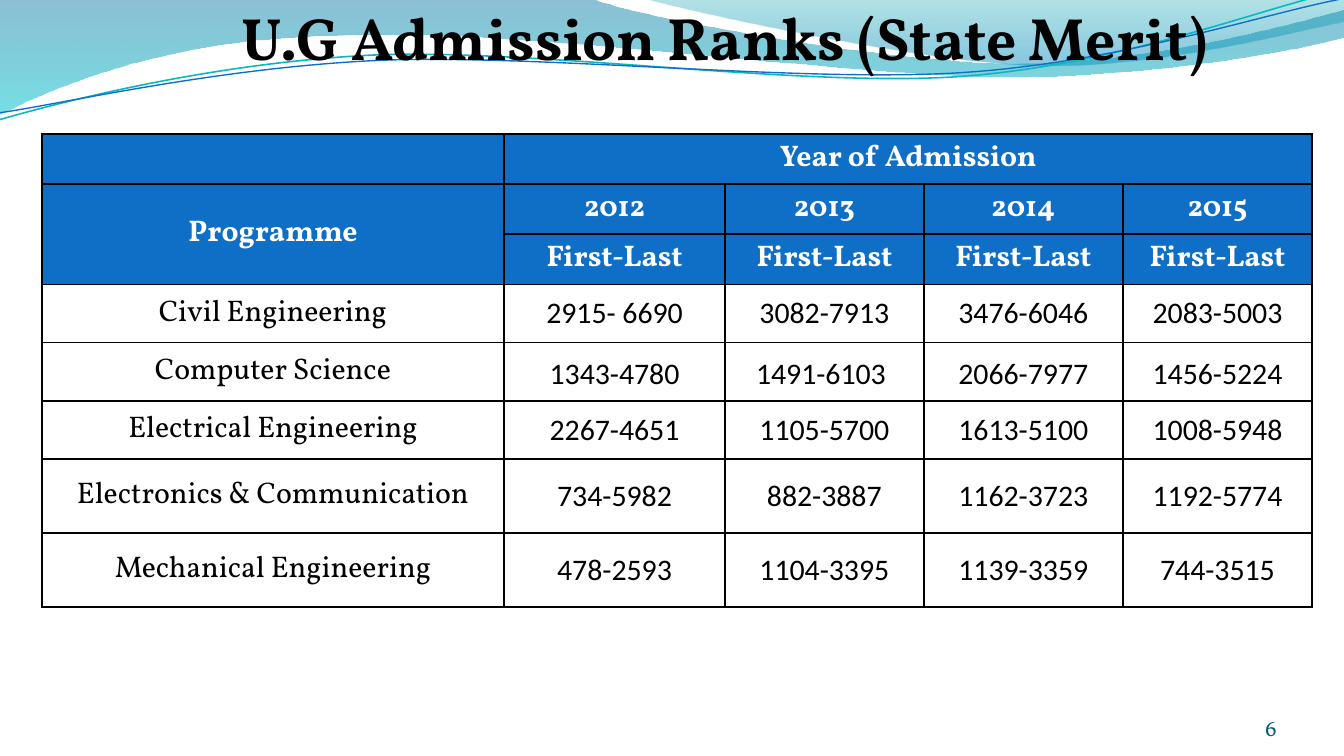
from math import cos, radians, sin

from pptx import Presentation
from pptx.dml.color import RGBColor
from pptx.enum.text import MSO_ANCHOR, MSO_AUTO_SIZE, PP_ALIGN
from pptx.oxml import parse_xml
from pptx.oxml.ns import nsdecls, qn
from pptx.util import Cm, Pt
from lxml.etree import SubElement

SERIF, SANS = "Vollkorn", "Calibri"
BLUE, WHITE, BLACK, TEAL = "0F6FC6", "FFFFFF", "000000", "045D75"
STRAND_TILT = -2.7  # degrees

# Each segment holds one point (line) or three points (Bezier curve), in cm
BANDS = [
    ([[(0, 0)], [(11.18, -0.03)],
      [(12.09, 0.33), (16.87, 1.19), (19.25, 1.19)],
      [(21.67, 1.19), (24.33, 0.48), (25.4, 0.18)],
      [(25.43, 0.69)],
      [(24.97, 0.84), (22.1, 1.45), (18.95, 1.45)],
      [(15.8, 1.42), (9.7, 0.53), (6.53, 0.66)],
      [(3.28, 0.69), (1.17, 1.57), (-0.03, 2.16)],
      [(0, 0)]],
     [(0, "0074A1", 45), (1, "00C6CF", 55)]),
    ([[(12.17, -0.03)],
      [(12.93, 0.2), (17.32, 1.17), (19.53, 1.24)],
      [(21.74, 1.32), (24.41, 0.61), (25.4, 0.41)],
      [(25.4, 0)], [(12.17, -0.03)]],
     [(0, "00A1A9", 30), (0.8, "008BBF", 45)]),
]
# Curve, centre, colour and width of each strand
STRANDS = [
    ([[(0, 2.26)],
      [(1.22, 1.91), (4.01, 1.19), (7.04, 1.04)],
      [(10.06, 0.91), (15.04, 1.65), (18.08, 1.45)],
      [(21.16, 1.24), (23.85, 0.15), (25.35, -0.18)]], (12.67, 1.1), "0AB8BF", 0.85),
    ([[(0, 2.13)],
      [(1.19, 1.96), (4.17, 1.27), (7.19, 1.14)],
      [(10.24, 1.02), (15.16, 1.57), (18.21, 1.37)],
      [(21.23, 1.17), (23.9, 0.25), (25.4, -0.03)]], (12.69, 1.13), BLUE, 0.75),
]

COLUMN_WIDTHS = [8.74, 4.17, 3.76, 3.76, 3.58]
ROW_HEIGHTS = [0.86] * 3 + [1.1] * 3 + [1.4] * 2
HEADER_ROWS = 3
RANKS = [
    ["", "Year of Admission", "", "", ""],
    ["Programme", "2012", "2013", "2014", "2015"],
    [""] + ["First-Last"] * 4,
    ["Civil Engineering", "2915- 6690", "3082-7913", "3476-6046", "2083-5003"],
    ["Computer Science", "1343-4780", "1491-6103 ", "2066-7977", "1456-5224"],
    ["Electrical Engineering", "2267-4651", "1105-5700", "1613-5100", "1008-5948"],
    ["Electronics & Communication", "734-5982", "882-3887", "1162-3723", "1192-5774"],
    ["Mechanical Engineering", "478-2593", "1104-3395", "1139-3359", "744-3515"],
]
SPACED_ROW = 4  # this row has tighter margins and wider line spacing


def color(hex_string):
    return RGBColor.from_string(hex_string)


def apply(target, formats):
    for name, value in formats.items():
        setattr(target, name, value)


def write(frame, text, font, size, ink, bold=False, align=PP_ALIGN.CENTER):
    paragraph = frame.paragraphs[0]
    paragraph.alignment = align
    if text:
        run = paragraph.add_run()
        run.text = text
        apply(run.font, {"name": font, "size": Pt(size), "bold": bold})
        run.font.color.rgb = color(ink)
    return paragraph


def margins(left, top, right, bottom):
    return {"margin_left": Cm(left), "margin_top": Cm(top),
            "margin_right": Cm(right), "margin_bottom": Cm(bottom)}


def turn(point, centre, degrees):
    angle = radians(degrees)
    dx, dy = point[0] - centre[0], point[1] - centre[1]
    return (centre[0] + dx * cos(angle) - dy * sin(angle),
            centre[1] + dx * sin(angle) + dy * cos(angle))


def add_outline(shapes, box, segments, close):
    left, top = box[:2]
    points = [(Cm(left + x), Cm(top + y)) for segment in segments for x, y in segment]
    builder = shapes.build_freeform(*points[0])
    builder.add_line_segments(points[1:], close=close)
    outline = builder.convert_to_shape()
    outline.shadow.inherit = False
    # Join each run of three points into one curve
    lines = iter(list(outline._element.spPr.iter(qn("a:lnTo"))))
    for segment in segments[1:]:
        parts = [next(lines) for _ in segment]
        if len(parts) == 3:
            curve = parse_xml(f'<a:cubicBezTo {nsdecls("a")}/>')
            parts[0].addprevious(curve)
            for part in parts:
                curve.append(part[0])
                part.getparent().remove(part)
    return outline


def add_waves(slide, box):
    # Translucent gradient bands
    for segments, stops in BANDS:
        band = add_outline(slide.shapes, box, segments, True)
        band.line.fill.background()
        band.fill.gradient()
        band.fill.gradient_angle = 270
        for stop, (position, tint, _) in zip(band.fill.gradient_stops, stops):
            stop.position = position
            stop.color.rgb = color(tint)
        tints = band._element.spPr.iter(qn("a:srgbClr"))
        for tint, (_, _, opacity) in zip(tints, stops):
            SubElement(tint, qn("a:alpha")).set("val", str(opacity * 1000))
    # Thin tilted strands
    strands = slide.shapes.add_group_shape().shapes
    for segments, centre, ink, width in STRANDS:
        level = [[turn(point, centre, -STRAND_TILT) for point in segment]
                 for segment in segments]
        strand = add_outline(strands, box, level, False)
        strand.rotation = STRAND_TILT
        strand.fill.background()
        strand.line.color.rgb = color(ink)
        strand.line.width = Pt(width)


def place(part, box):
    apply(part, dict(zip(("left", "top", "width", "height"), map(Cm, box))))


def add_title(slide, box):
    title = slide.shapes.title
    slide.shapes._spTree.append(title._element)  # in front of the waves
    place(title, box)
    apply(title.text_frame, {**margins(0, 0.13, 0, 0), "word_wrap": True,
                             "auto_size": MSO_AUTO_SIZE.NONE,
                             "vertical_anchor": MSO_ANCHOR.BOTTOM})
    write(title.text_frame, "U.G Admission Ranks (State Merit)", SERIF, 32, BLACK, True)


def add_borders(cell):
    properties = cell._tc.get_or_add_tcPr()
    for index, side in enumerate(("lnL", "lnR", "lnT", "lnB")):
        properties.insert(index, parse_xml(
            f'<a:{side} {nsdecls("a")} w="{Pt(1)}"><a:solidFill>'
            f'<a:srgbClr val="{BLACK}"/></a:solidFill></a:{side}>'))


def add_rank_table(slide, box):
    table = slide.shapes.add_table(len(RANKS), len(COLUMN_WIDTHS), *map(Cm, box)).table
    apply(table, {"first_row": False, "horz_banding": False})
    for column, width in zip(table.columns, COLUMN_WIDTHS):
        column.width = Cm(width)
    for row, height in zip(table.rows, ROW_HEIGHTS):
        row.height = Cm(height)
    table.cell(0, 1).merge(table.cell(0, 4))
    table.cell(1, 0).merge(table.cell(2, 0))

    for r, texts in enumerate(RANKS):
        for c, text in enumerate(texts):
            cell = table.cell(r, c)
            header = r < HEADER_ROWS
            spaced = r == SPACED_ROW and c > 0
            top_aligned = header and (c > 0 or r == 0)
            apply(cell, {
                **(margins(0.18, 0, 0.18, 0) if spaced else margins(0.25, 0.08, 0.25, 0.08)),
                "vertical_anchor": MSO_ANCHOR.TOP if top_aligned else MSO_ANCHOR.MIDDLE})
            cell.fill.solid()
            cell.fill.fore_color.rgb = color(BLUE if header else WHITE)
            paragraph = write(cell.text_frame, text, SERIF if header or c == 0 else SANS,
                              16, WHITE if header else BLACK, header)
            if spaced:
                paragraph.line_spacing = 1.15
            add_borders(cell)


def add_page_number(slide, box):
    number = slide.shapes.add_textbox(*map(Cm, box))
    apply(number.text_frame, {**margins(0, 0, 0, 0), "word_wrap": True,
                              "vertical_anchor": MSO_ANCHOR.BOTTOM})
    write(number.text_frame, "6", SERIF, 12, TEAL, align=PP_ALIGN.RIGHT)


def main():
    deck = Presentation()
    apply(deck, {"slide_width": Cm(25.4), "slide_height": Cm(14.29)})
    slide = deck.slides.add_slide(deck.slide_layouts[5])
    add_waves(slide, (0, 0, 25.4, 2.3))
    add_title(slide, (3.18, 0, 21.03, 1.37))
    add_rank_table(slide, (0.79, 2.53, sum(COLUMN_WIDTHS), sum(ROW_HEIGHTS)))
    add_page_number(slide, (22.02, 13.24, 2.11, 0.76))
    deck.save("out.pptx")


if __name__ == "__main__":
    main()
